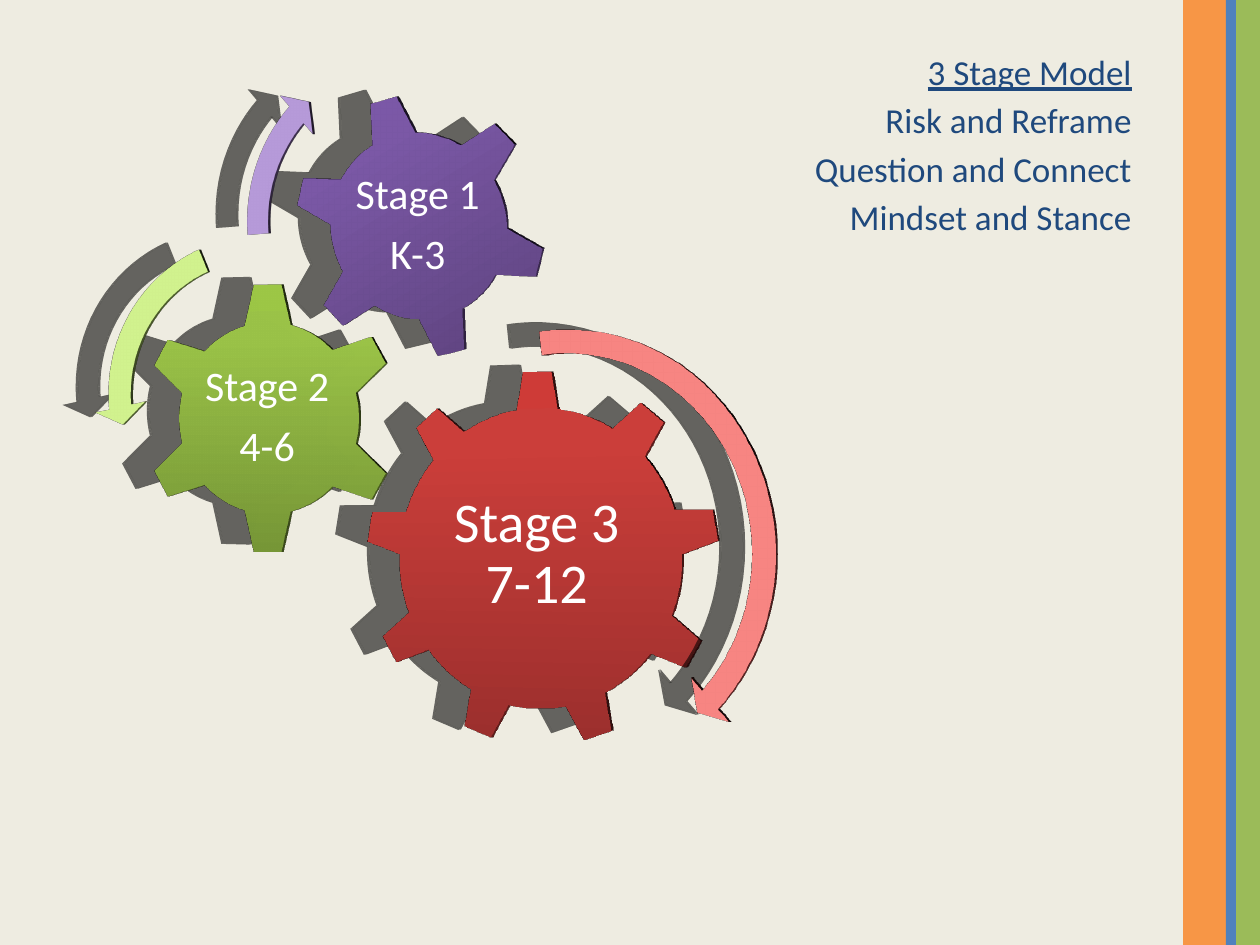
from lxml.etree import SubElement
from pptx import Presentation
from pptx.dml.color import RGBColor
from pptx.enum.shapes import MSO_SHAPE
from pptx.enum.text import MSO_ANCHOR, PP_ALIGN
from pptx.oxml.ns import qn
from pptx.util import Emu, Inches, Pt

COLORS = {
    "background": "EEECE1", "orange": "F79646", "green": "9BBB59", "blue": "4F81BD",
    "red": "C0504D", "purple": "8064A2", "navy": "1F497D", "white": "FFFFFF",
    "shadow": "000000",
}
BARS = [(9.39, 0.35, "orange"), (9.81, 0.19, "green"), (9.73, 0.08, "blue")]
MODEL = ["3 Stage Model", "Risk and Reframe", "Question and Connect", "Mindset and Stance"]

# shape, left, top, size, rotation, gradient stops from the bottom up
GEARS = [
    (MSO_SHAPE.GEAR_9, 2.77, 2.94, 2.98, 0, ["9C2F2D", "CB3E3A", "CE3B37"]),
    (MSO_SHAPE.GEAR_6, 1.04, 2.23, 2.17, 0, ["779737", "9BC348", "9DC746"]),
    (MSO_SHAPE.GEAR_6, 2.25, 0.74, 2.12, 345, ["5F4480", "7B58A6", "7C57A8"]),
]
STOPS = [0, 80, 100]
# left, top, width, height, paragraphs, text size, inset
LABELS = [
    (3.37, 3.64, 1.78, 1.53, ["Stage 3 7-12"], 32, 0.04),
    (1.58, 2.78, 1.08, 1.07, ["Stage 2", "4-6"], 24, 0.03),
    (2.72, 1.2, 1.19, 1.19, ["Stage 1", "K-3"], 24, 0.03),
]
# shape, left, top, size, adjustments, colour
ARROWS = [
    (MSO_SHAPE.CIRCULAR_ARROW, 2.55, 2.48, 3.81,
     [0.05, 2.99, 25.32, 158.28, 0.06], "red"),
    (MSO_SHAPE.LEFT_CIRCULAR_ARROW, 0.65, 1.75, 2.77,
     [0.07, 4.3, 104.89, 148.38, 0.08], "green"),
    (MSO_SHAPE.CIRCULAR_ARROW, 1.76, 0.27, 2.99,
     [0.06, 3.94, 133.14, 105.08, 0.07], "purple"),
]


def rgb(name):
    return RGBColor.from_string(COLORS[name])


def child(parent, tag, **attrs):
    return SubElement(parent, qn(tag), {k: str(v) for k, v in attrs.items()})


def add_shape(s, kind, left, top, width, height, color=None):
    sp = s.shapes.add_shape(kind, Inches(left), Inches(top), Inches(width), Inches(height))
    sp.line.fill.background()
    sp.shadow.inherit = False
    if color:
        sp.fill.solid()
        sp.fill.fore_color.rgb = rgb(color)
    return sp


def set_gradient(sp, colors):
    sp.fill.gradient()
    sp.fill.gradient_angle = 90
    stops = sp._element.spPr.find(qn("a:gradFill")).find(qn("a:gsLst"))
    for gs in list(stops):
        stops.remove(gs)
    for pos, color in zip(STOPS, colors):
        child(child(stops, "a:gs", pos=pos * 1000), "a:srgbClr", val=color)


def make_3d(sp):
    """Cast a shadow to the left and extrude the shape in a left perspective."""
    spPr = sp._element.spPr
    shadow = child(spPr.find(qn("a:effectLst")), "a:outerShdw", blurRad=Pt(14.5),
                   dist=Pt(19), dir=192 * 60000, rotWithShape=0)
    child(child(shadow, "a:srgbClr", val=COLORS["shadow"]), "a:alpha", val=35000)
    scene = child(spPr, "a:scene3d")
    child(scene, "a:camera", prst="perspectiveLeft", zoom=91000)
    light = child(scene, "a:lightRig", rig="threePt", dir="t")
    child(light, "a:rot", lat=0, lon=0, rev=344 * 60000)
    child(spPr, "a:sp3d", extrusionH=Emu(50600), prstMaterial="metal")


def add_text(s, left, top, width, height, lines, size, color, align, spacing,
             inset, anchor, after=None):
    box = s.shapes.add_textbox(Inches(left), Inches(top), Inches(width), Inches(height))
    tf = box.text_frame
    tf.word_wrap = True
    tf.vertical_anchor = anchor
    tf.margin_left = tf.margin_right = tf.margin_top = tf.margin_bottom = Inches(inset)
    tf.text = "\n".join(lines)
    for p in tf.paragraphs:
        p.alignment = align
        p.line_spacing = spacing
        p.space_after = after
        for r in p.runs:
            r.font.size = Pt(size)
            r.font.name = "Calibri"
            r.font.color.rgb = rgb(color)
    return tf


def main():
    prs = Presentation()
    prs.slide_width, prs.slide_height = Inches(10), Inches(7.5)
    s = prs.slides.add_slide(prs.slide_layouts[6])
    s.background.fill.solid()
    s.background.fill.fore_color.rgb = rgb("background")

    for left, width, color in BARS:
        add_shape(s, MSO_SHAPE.RECTANGLE, left, 0, width, 7.5, color)

    tf = add_text(s, 5.58, 0.25, 3.5, 4.17, MODEL, 20, "navy", PP_ALIGN.RIGHT, 1.15,
                  0.1, MSO_ANCHOR.TOP)
    tf.paragraphs[0].runs[0].font.underline = True

    for gear, label in zip(GEARS, LABELS):
        kind, left, top, size, rotation, colors = gear
        sp = add_shape(s, kind, left, top, size, size)
        sp.rotation = rotation
        set_gradient(sp, colors)
        make_3d(sp)
        left, top, width, height, lines, size, inset = label
        add_text(s, left, top, width, height, lines, size, "white", PP_ALIGN.CENTER, 0.9,
                 inset, MSO_ANCHOR.MIDDLE, Pt(size * 0.35))

    for kind, left, top, size, adjustments, color in ARROWS:
        sp = add_shape(s, kind, left, top, size, size, color)
        for i, value in enumerate(adjustments):
            sp.adjustments[i] = value
        make_3d(sp)

    prs.save("out.pptx")


if __name__ == "__main__":
    main()
